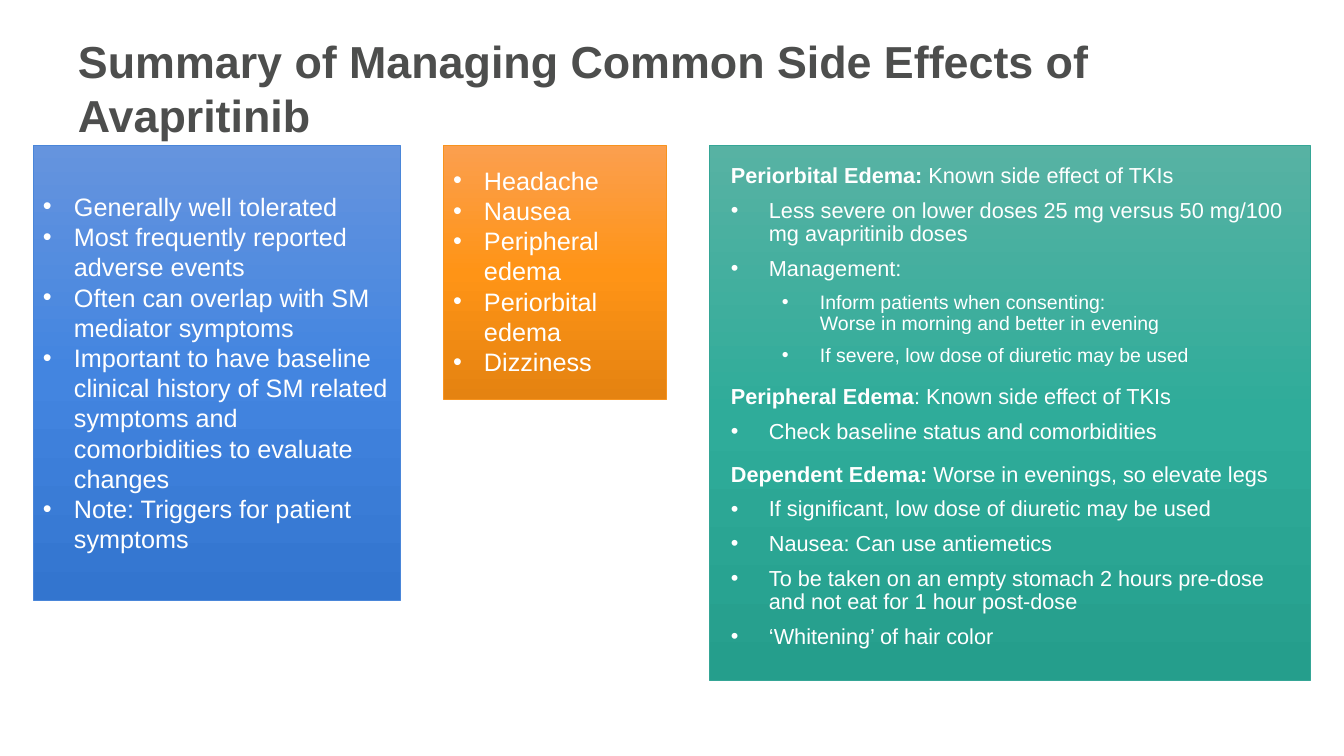
"""Build a slide summarising how to manage common side effects of avapritinib."""
from copy import deepcopy

from lxml.etree import SubElement
from pptx import Presentation
from pptx.dml.color import RGBColor
from pptx.enum.shapes import MSO_SHAPE
from pptx.enum.text import MSO_ANCHOR, MSO_AUTO_SIZE, PP_ALIGN
from pptx.oxml.ns import qn
from pptx.util import Emu, Pt

EMU_PER_PX = 914400 / 100.8
FONT = "Arial"
WHITE = RGBColor(0xFF, 0xFF, 0xFF)
TITLE_GREY = RGBColor(0x4D, 0x4E, 0x4D)
BLUE_EDGE = RGBColor(0x4A, 0x86, 0xD9)
BLUES = (RGBColor(0x65, 0x94, 0xDE), RGBColor(0x43, 0x85, 0xE0), RGBColor(0x33, 0x75, 0xCF))
ORANGE_EDGE = RGBColor(0xF7, 0x93, 0x1E)
ORANGES = (RGBColor(0xFB, 0x9F, 0x4F), RGBColor(0xFF, 0x94, 0x16), RGBColor(0xE5, 0x83, 0x11))
GREEN_EDGE = RGBColor(0x35, 0xA6, 0x96)
GREENS = (RGBColor(0x57, 0xB2, 0xA3), RGBColor(0x2F, 0xAC, 0x9A), RGBColor(0x25, 0x9E, 0x8C))

PANEL_TOP = 145
TOLERABILITY = (
    "Generally well tolerated",
    "Most frequently reported adverse events",
    "Often can overlap with SM mediator symptoms",
    "Important to have baseline clinical history of SM related symptoms "
    "and comorbidities to evaluate changes",
    "Note: Triggers for patient symptoms",
)
SIDE_EFFECTS = ("Headache", "Nausea", "Peripheral edema", "Periorbital edema", "Dizziness")
MANAGEMENT = (
    ("Periorbital Edema: ", "Known side effect of TKIs", (
        (0, "Less severe on lower doses 25 mg versus 50 mg/100 mg avapritinib doses"),
        (0, "Management:"),
        (1, "Inform patients when consenting: \nWorse in morning and better in evening"),
        (1, "If severe, low dose of diuretic may be used"),
    )),
    ("Peripheral Edema", ": Known side effect of TKIs", (
        (0, "Check baseline status and comorbidities"),
    )),
    ("Dependent Edema: ", "Worse in evenings, so elevate legs", (
        (0, "If significant, low dose of diuretic may be used"),
        (0, "Nausea: Can use antiemetics"),
        (0, "To be taken on an empty stomach 2 hours pre-dose and not eat for 1 hour post-dose"),
        (0, "‘Whitening’ of hair color"),
    )),
)


def px(length):
    return Emu(round(length * EMU_PER_PX))


def add_run(paragraph, text, size, color=WHITE, bold=False):
    for index, line in enumerate(text.split("\n")):
        if index:
            paragraph.add_line_break()
        run = paragraph.add_run()
        run.text = line
        run.font.name = FONT
        run.font.size = Pt(size)
        run.font.bold = bold
        run.font.color.rgb = color


def set_frame(frame, anchor, top=5, bottom=5):
    frame.word_wrap = True
    frame.auto_size = MSO_AUTO_SIZE.NONE
    frame.vertical_anchor = anchor
    frame.margin_left = frame.margin_right = px(10)
    frame.margin_top, frame.margin_bottom = px(top), px(bottom)


def next_paragraph(frame):
    first = frame.paragraphs[0]
    paragraph = first if not first.runs else frame.add_paragraph()
    paragraph.alignment = PP_ALIGN.LEFT
    return paragraph


def indent(paragraph, left, hanging=0):
    properties = paragraph._p.get_or_add_pPr()
    properties.set("marL", str(px(left)))
    properties.set("indent", str(px(-hanging)))
    if hanging:
        bullet_color = SubElement(properties, qn("a:buClr"))
        SubElement(bullet_color, qn("a:srgbClr"), val=str(WHITE))
        SubElement(properties, qn("a:buFont"), typeface=FONT)
        SubElement(properties, qn("a:buChar"), char="•")


def add_bullet(frame, text, size, left, hanging):
    paragraph = next_paragraph(frame)
    indent(paragraph, left, hanging)
    add_run(paragraph, text, size)
    return paragraph


def set_title(slide, text):
    title = slide.shapes.title
    title.left, title.top, title.width, title.height = map(px, (68, 22, 1184, 131))
    set_frame(title.text_frame, MSO_ANCHOR.MIDDLE)
    add_run(next_paragraph(title.text_frame), text, 32, TITLE_GREY, bold=True)


def add_panel(slide, left, width, height, shades, edge):
    panel = slide.shapes.add_shape(
        MSO_SHAPE.RECTANGLE, *map(px, (left, PANEL_TOP, width, height)))
    panel.shadow.inherit = False
    panel.fill.gradient()
    panel.fill.gradient_angle = 270
    stop_list = panel._element.spPr.find(".//" + qn("a:gsLst"))
    stop_list.insert(1, deepcopy(stop_list[0]))
    for stop, shade, position in zip(panel.fill.gradient_stops, shades, (0, 0.5, 1)):
        stop.position = position
        stop.color.rgb = shade
    panel.line.color.rgb = edge
    panel.line.width = Pt(0.5)
    return panel.text_frame


def fill_list(frame, items):
    for item in items:
        add_bullet(frame, item, 18, 31, 31)


def space(paragraph, before=0):
    paragraph.line_spacing = 0.9
    paragraph.space_after = Pt(8)
    if before:
        paragraph.space_before = Pt(before)


def fill_management(frame):
    for index, (topic, remark, advice) in enumerate(MANAGEMENT):
        heading = next_paragraph(frame)
        indent(heading, 12)
        space(heading, before=6 if index else 0)
        add_run(heading, topic, 15.5, bold=True)
        add_run(heading, remark, 15.5)
        for level, text in advice:
            bullet = add_bullet(frame, text, (15.5, 13.9)[level], (50, 101)[level], 38)
            bullet.level = level
            space(bullet)


def main():
    deck = Presentation()
    deck.slide_width, deck.slide_height = px(1344), px(756)
    slide = deck.slides.add_slide(deck.slide_layouts[5])
    set_title(slide, "Summary of Managing Common Side Effects of Avapritinib")

    side_effects = add_panel(slide, 443, 223, 254, ORANGES, ORANGE_EDGE)
    set_frame(side_effects, MSO_ANCHOR.TOP, top=20, bottom=20)
    fill_list(side_effects, SIDE_EFFECTS)

    tolerability = add_panel(slide, 33, 367, 455, BLUES, BLUE_EDGE)
    set_frame(tolerability, MSO_ANCHOR.MIDDLE)
    fill_list(tolerability, TOLERABILITY)

    management = add_panel(slide, 709, 601, 535, GREENS, GREEN_EDGE)
    set_frame(management, MSO_ANCHOR.TOP, top=20)
    fill_management(management)

    deck.save("out.pptx")


if __name__ == "__main__":
    main()
